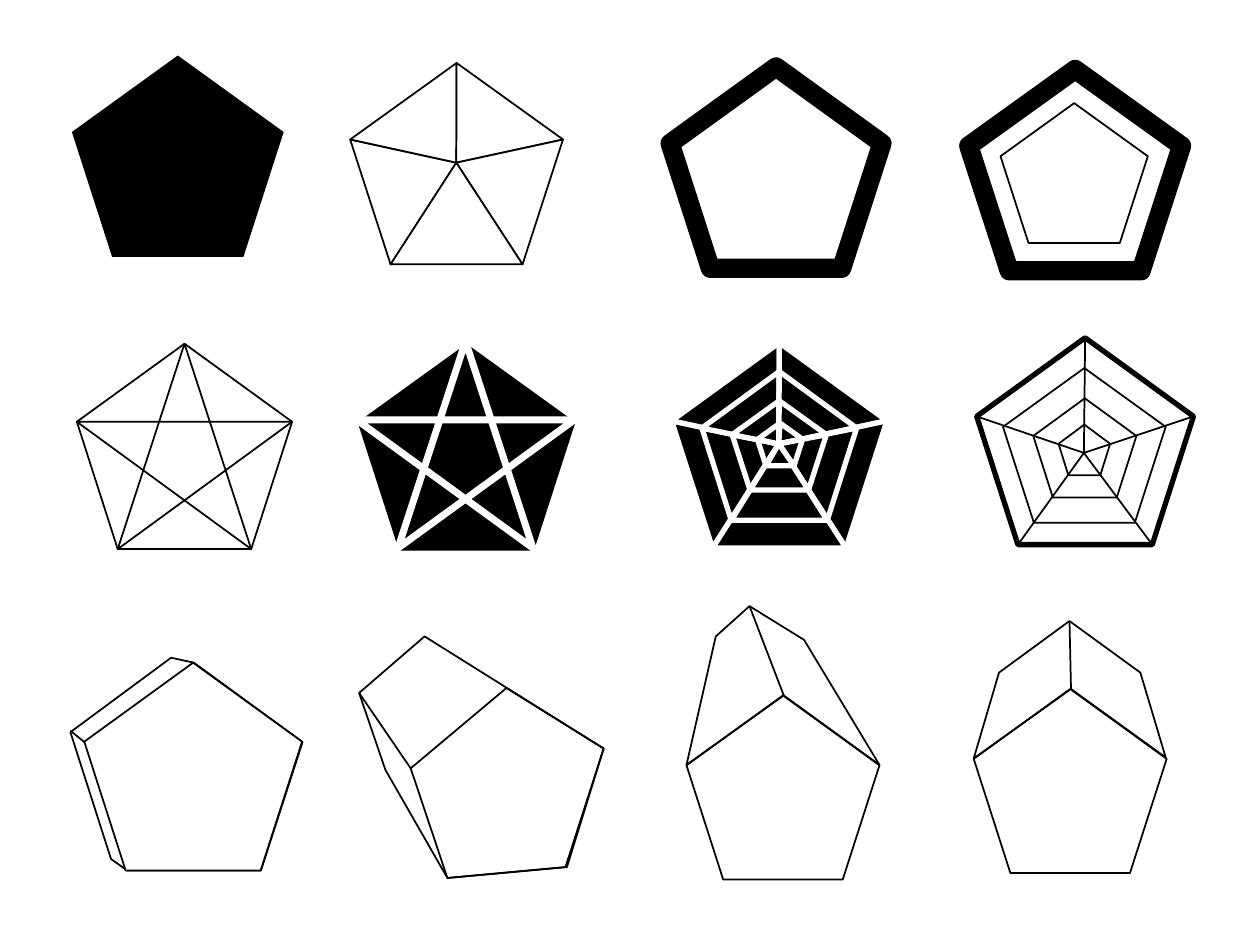
"""Draw a sheet of twelve pentagon figures: plain, rings, fan, stars, webs and prisms."""
from dataclasses import dataclass
from typing import NamedTuple, Optional

from lxml.etree import SubElement
from pptx import Presentation
from pptx.dml.color import RGBColor
from pptx.enum.shapes import MSO_CONNECTOR as Connector
from pptx.oxml.ns import qn
from pptx.util import Cm, Pt

BLACK, WHITE = "000000", "FFFFFF"
STAR_ORDER = (2, 0, 3, 1, 4)
WEDGE_COUNT = 5


class Point(NamedTuple):
    x: float
    y: float


class Pentagon(NamedTuple):
    left: float
    top: float
    width: float
    height: float

    def corners(self) -> list[Point]:
        ratios = ((0.19, 1), (0, 0.38), (0.5, 0), (1, 0.38), (0.81, 1))
        return [Point(self.left + x * self.width, self.top + y * self.height)
                for x, y in ratios]


@dataclass(frozen=True)
class Style:
    fill: Optional[str] = None
    line: Optional[str] = BLACK
    width: float = 1


@dataclass(frozen=True)
class Fan:
    rings: tuple
    center: Point
    style: Style


@dataclass(frozen=True)
class Star:
    body: Pentagon
    star: Pentagon
    body_style: Style
    star_style: Style


@dataclass(frozen=True)
class Prism:
    hull: tuple
    front: list
    edge: tuple
    front_style: Style


OUTLINE = Style()
PAPER = Style(fill=WHITE)
THICK = Style(width=11)
BOLD_PAPER = Style(fill=WHITE, width=3)
SOLID = Style(fill=BLACK, line=None)
CUT_SOLID = Style(fill=BLACK, line=WHITE, width=3)
CUT = Style(line=WHITE, width=4)

SINGLE_RING = Pentagon(13.51, 1.35, 4.27, 4.06)
PLAIN_SOLID = Pentagon(1.45, 1.12, 4.27, 4.06)
DOUBLE_RING = ((Pentagon(19.53, 1.4, 4.29, 4.06), THICK),
               (Pentagon(20.17, 2.08, 2.97, 2.82), OUTLINE))

OUTLINE_FAN = Fan((Pentagon(7.06, 1.27, 4.29, 4.06),), Point(9.2, 3.28), PAPER)
SOLID_WEB = Fan(
    (Pentagon(13.54, 6.91, 4.34, 4.14), Pentagon(14.15, 7.49, 3.12, 3),
     Pentagon(14.76, 8.08, 1.9, 1.8), Pentagon(15.27, 8.53, 0.91, 0.86)),
    Point(15.7, 8.95), CUT_SOLID)
STARS = (
    Star(Pentagon(1.55, 6.93, 4.34, 4.14), Pentagon(1.55, 6.93, 4.34, 4.14),
         PAPER, PAPER),
    Star(Pentagon(7.21, 6.93, 4.39, 4.17), Pentagon(7.19, 6.88, 4.39, 4.17),
         SOLID, CUT),
)
PRISMS = (
    Prism(((15.8, 14.02), (13.84, 15.42), (14.43, 12.83), (15.11, 12.22),
           (16.21, 12.9), (17.73, 15.42)),
          Pentagon(13.84, 14.02, 3.89, 3.71).corners(),
          ((15.11, 12.22), (15.8, 14.02)), OUTLINE),
    Prism(((21.59, 13.89), (19.63, 15.29), (20.14, 13.56), (21.56, 12.52),
           (22.99, 13.56), (23.5, 15.27)),
          Pentagon(19.63, 13.89, 3.89, 3.71).corners(),
          ((21.56, 12.52), (21.59, 13.89)), OUTLINE),
    Prism(((9.02, 17.7), (7.77, 15.52), (7.24, 13.97), (8.56, 12.83),
           (12.17, 15.09), (11.43, 17.48)),
          [(9.02, 17.7), (8.28, 15.49), (10.21, 13.87), (12.17, 15.09),
           (11.4, 17.48)],
          ((7.24, 13.97), (8.28, 15.49)), OUTLINE),
    Prism(((2.57, 17.55), (2.24, 17.32), (1.42, 14.76), (3.45, 13.26),
           (3.91, 13.36), (6.1, 14.96), (5.26, 17.55)),
          Pentagon(1.7, 13.36, 4.39, 4.19).corners(),
          ((1.42, 14.73), (1.7, 14.96)), PAPER),
)
LINE_WEB = (
    (Pentagon(19.69, 6.81, 4.37, 4.17), BOLD_PAPER),
    (Pentagon(20.22, 7.42, 3.28, 3.12), PAPER),
    (Pentagon(20.83, 8.03, 2.08, 2), PAPER),
    (Pentagon(21.34, 8.56, 1.04, 1.02), PAPER),
)
LINE_WEB_CENTER = Point(21.85, 9.13)


def paint(fill, color: Optional[str]) -> None:
    if color is None:
        fill.background()
    else:
        fill.solid()
        fill.fore_color.rgb = RGBColor.from_string(color)


def draw_outline(shapes, points, style: Style) -> None:
    start, *rest = [(Cm(x), Cm(y)) for x, y in points]
    builder = shapes.build_freeform(*start)
    builder.add_line_segments(rest, close=True)
    shape = builder.convert_to_shape()
    shape.shadow.inherit = False
    for target, color in {shape.fill: style.fill, shape.line.fill: style.line}.items():
        paint(target, color)
    if style.line:
        shape.line.width = Pt(style.width)


def draw_line(shapes, start, end) -> None:
    ends = [Cm(value) for value in (*start, *end)]
    connector = shapes.add_connector(Connector.STRAIGHT, *ends)
    paint(connector.line.fill, OUTLINE.line)
    connector.line.width = Pt(OUTLINE.width)
    properties = connector.element.find(qn("p:spPr"))
    SubElement(properties, qn("a:effectLst"))


def draw_rings(shapes, rings) -> None:
    for pentagon, style in rings:
        draw_outline(shapes, pentagon.corners(), style)


def draw_fan(shapes, fan: Fan) -> None:
    for wedge in range(WEDGE_COUNT):
        for ring in fan.rings:
            corners = ring.corners()
            following = corners[(wedge + 1) % WEDGE_COUNT]
            draw_outline(shapes, (corners[wedge], fan.center, following), fan.style)


def draw_star(shapes, figure: Star) -> None:
    draw_outline(shapes, figure.body.corners(), figure.body_style)
    corners = figure.star.corners()
    draw_outline(shapes, [corners[index] for index in STAR_ORDER], figure.star_style)


def draw_prism(shapes, prism: Prism) -> None:
    draw_outline(shapes, prism.hull, OUTLINE)
    draw_outline(shapes, prism.front, prism.front_style)
    draw_line(shapes, *prism.edge)


def draw_line_web(shapes, rings, center: Point) -> None:
    draw_rings(shapes, rings)
    for corner in rings[0][0].corners():
        draw_line(shapes, center, corner)


def main() -> None:
    presentation = Presentation()
    sizes = {"slide_width": Cm(25.4), "slide_height": Cm(19.05)}
    for name, value in sizes.items():
        setattr(presentation, name, value)
    slide = presentation.slides.add_slide(presentation.slide_layouts[6])

    def group():
        return slide.shapes.add_group_shape().shapes

    draw_rings(slide.shapes, ((SINGLE_RING, THICK), (PLAIN_SOLID, SOLID)))
    draw_rings(group(), DOUBLE_RING)
    for draw, figures in ((draw_fan, (OUTLINE_FAN,)), (draw_star, STARS),
                          (draw_fan, (SOLID_WEB,)), (draw_prism, PRISMS)):
        for figure in figures:
            draw(group(), figure)
    draw_line_web(group(), LINE_WEB, LINE_WEB_CENTER)
    presentation.save("out.pptx")


if __name__ == "__main__":
    main()
